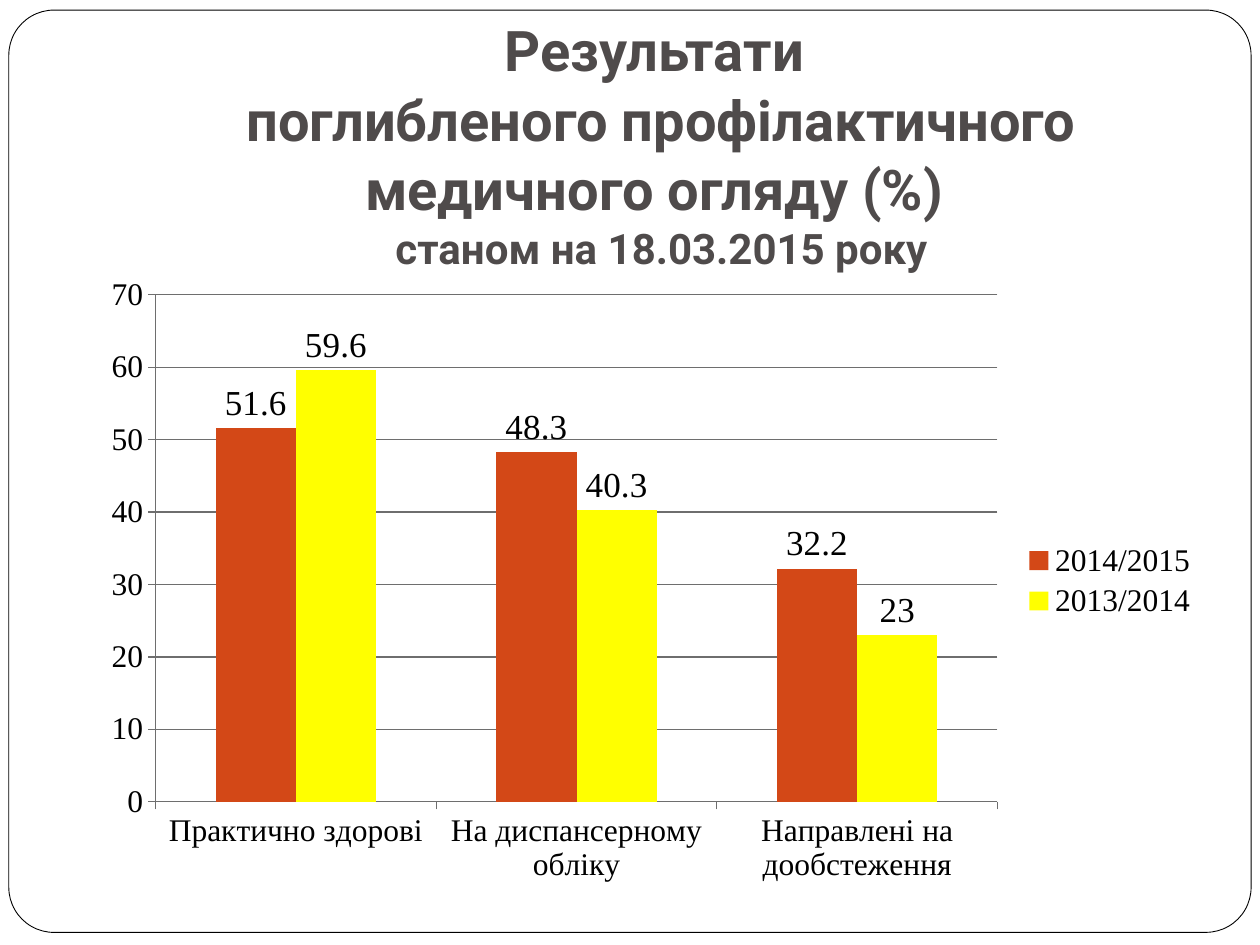
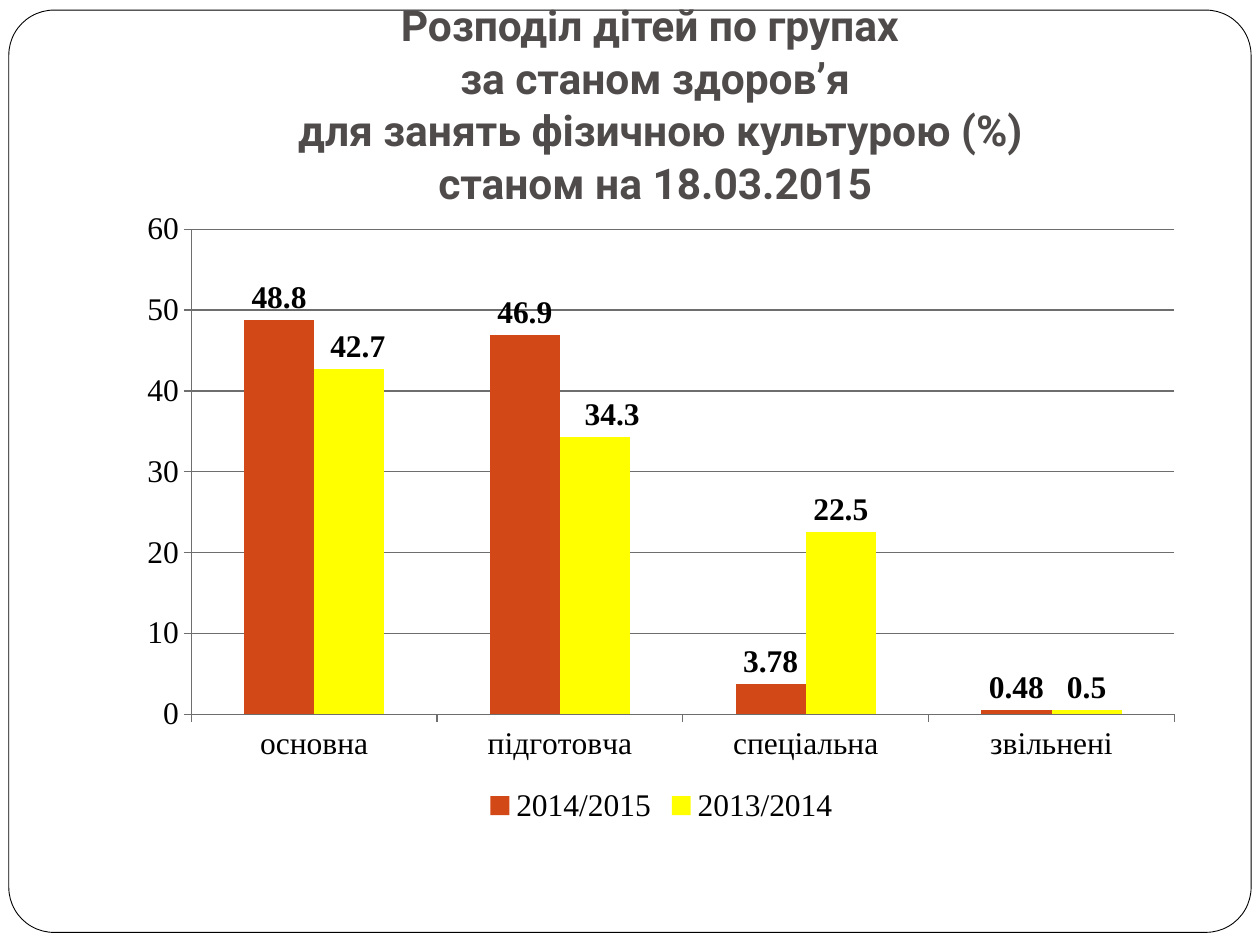
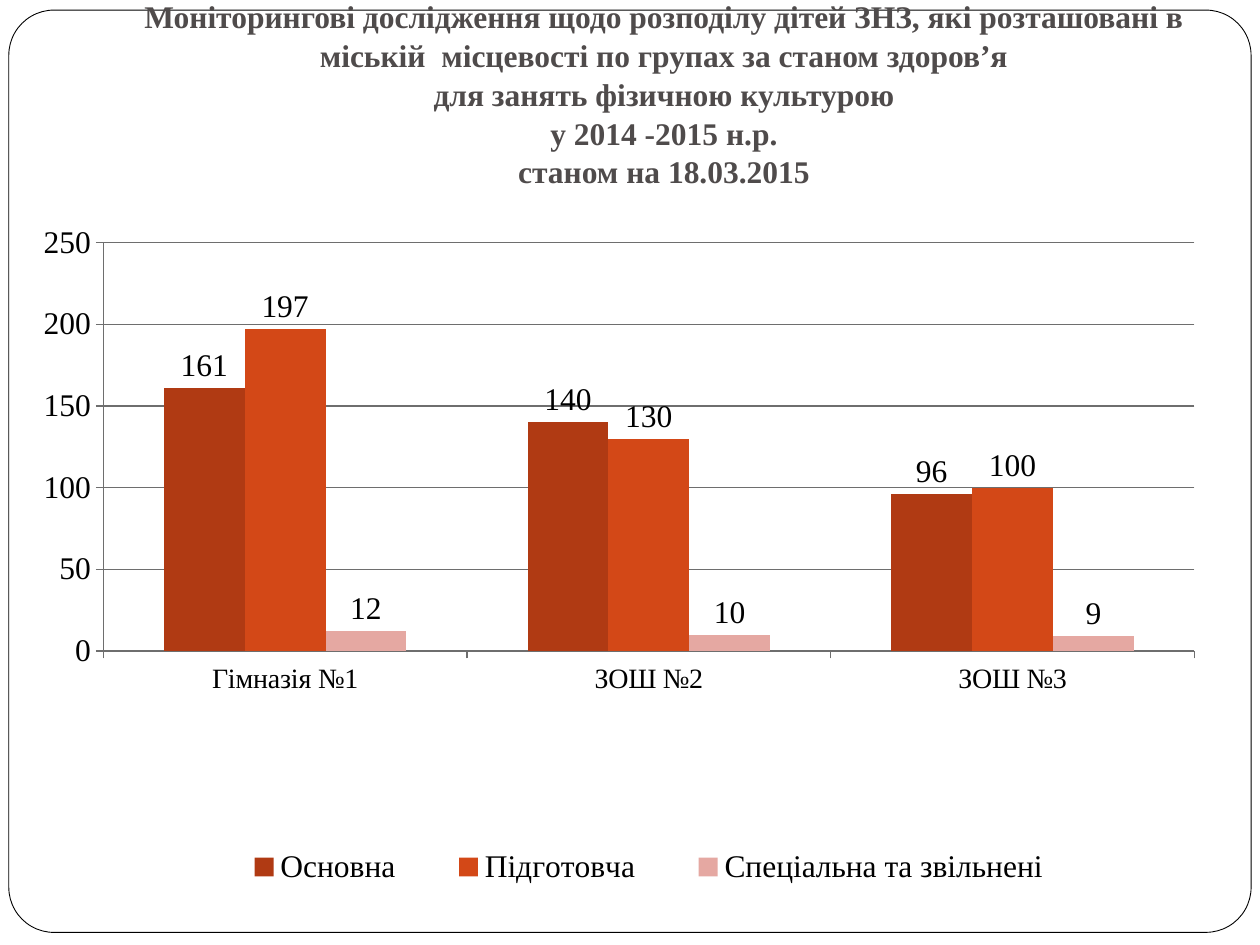
import lxml.etree
import pptx
import pptx.chart.data
import pptx.dml.color
import pptx.enum.chart
import pptx.enum.shapes
import pptx.enum.text
import pptx.oxml.ns
import pptx.util

Inches = pptx.util.Inches
Pt = pptx.util.Pt

BLACK, WHITE, TITLE_GREY, AXIS_GREY = "000000", "FFFFFF", "4F4B4B", "6E6E6E"
ORANGE, YELLOW, RUST, ROSE = "D34817", "FFFF00", "B03A13", "E5A8A2"
HEADING_FONT, BODY_FONT = "Roboto", "Times New Roman"


def rgb(hex_code):
    return pptx.dml.color.RGBColor.from_string(hex_code)


def style_font(font, size=18, name=BODY_FONT, color=BLACK, bold=False):
    font.size, font.name, font.bold = Pt(size), name, bold
    font.color.rgb = rgb(color)


def add_text(paragraph, text, **style):
    """Append text to a paragraph, turning each newline into a line break."""
    for number, line in enumerate(text.split("\n")):
        if number:
            paragraph.add_line_break()
        if line:
            run = paragraph.add_run()
            run.text = line
            style_font(run.font, **style)


def manual_layout(parts):
    """Build a c:layout element from pairs of part name and value."""
    layout = lxml.etree.Element(pptx.oxml.ns.qn("c:layout"))
    manual = lxml.etree.SubElement(layout, pptx.oxml.ns.qn("c:manualLayout"))
    for part, value in parts.items():
        lxml.etree.SubElement(manual, pptx.oxml.ns.qn(f"c:{part}")).set("val", str(value))
    return layout


def box_layout(left, top, width, height, **target):
    return manual_layout({**target, "xMode": "edge", "yMode": "edge",
                          "x": left, "y": top, "w": width, "h": height})


class Deck:
    def __init__(self):
        self.presentation = pptx.Presentation()
        self.presentation.slide_width = Inches(10)
        self.presentation.slide_height = Inches(7.5)
        self.slide = None

    def new_slide(self):
        first = self.slide is None
        self.slide = self.presentation.slides.add_slide(self.presentation.slide_layouts[5])
        if first:
            self.frame_master()

    def frame_master(self):
        """Put the rounded frame on the master, behind everything."""
        frame = self.slide.shapes.add_shape(
            pptx.enum.shapes.MSO_SHAPE.ROUNDED_RECTANGLE,
            Inches(0.07), Inches(0.08), Inches(9.86), Inches(7.32))
        frame.adjustments[0] = 0.049
        frame.shadow.inherit = False
        frame.fill.solid()
        frame.fill.fore_color.rgb = rgb(WHITE)
        frame.line.color.rgb = rgb(BLACK)
        frame.line.width = Pt(0.5)
        self.presentation.slide_master.shapes._spTree.insert(2, frame._element)

    def title(self, box, parts, bottom_inset=0.1, font=HEADING_FONT):
        """Fill the title with (text, size) parts."""
        title = self.slide.shapes.title
        title.left, title.top, title.width, title.height = map(Inches, box)
        frame = title.text_frame
        frame.word_wrap = True
        frame.auto_size = pptx.enum.text.MSO_AUTO_SIZE.NONE
        frame.vertical_anchor = pptx.enum.text.MSO_ANCHOR.BOTTOM
        frame.margin_left = frame.margin_right = Inches(0.1)
        frame.margin_top, frame.margin_bottom = Inches(0.05), Inches(bottom_inset)
        paragraph = frame.paragraphs[0]
        paragraph.alignment = pptx.enum.text.PP_ALIGN.CENTER
        paragraph.line_spacing = 1.03
        for text, size in parts:
            add_text(paragraph, text, size=size, name=font, color=TITLE_GREY, bold=True)

    def column_chart(self, box, categories, series, plot, top, step, category_size=18,
                     label_size=18, label_bold=False, legend_below=True):
        """Add clustered columns; series holds (name, colour, values)."""
        data = pptx.chart.data.CategoryChartData()
        data.categories = categories
        for name, _, values in series:
            data.add_series(name, values)
        chart = self.slide.shapes.add_chart(
            pptx.enum.chart.XL_CHART_TYPE.COLUMN_CLUSTERED, *map(Inches, box), data).chart
        style_font(chart.font)
        chart.has_title = False
        columns = chart.plots[0]
        columns.gap_width, columns.overlap = 150, 0
        columns.vary_by_categories = False

        for column, (_, color, _) in zip(columns.series, series):
            column.format.fill.solid()
            column.format.fill.fore_color.rgb = rgb(color)
            column.invert_if_negative = False
            labels = column.data_labels
            labels.show_value = True
            labels.position = pptx.enum.chart.XL_LABEL_POSITION.OUTSIDE_END
            style_font(labels.font, size=label_size, bold=label_bold)

        values_axis = chart.value_axis
        values_axis.minimum_scale, values_axis.maximum_scale = 0, top
        values_axis.major_unit = step
        values_axis.has_major_gridlines = True
        style_font(chart.category_axis.tick_labels.font, size=category_size)
        for part in (values_axis, chart.category_axis, values_axis.major_gridlines):
            part.format.line.color.rgb = rgb(AXIS_GREY)
            part.format.line.width = Pt(0.75)

        chart.has_legend = True
        position = pptx.enum.chart.XL_LEGEND_POSITION
        chart.legend.position = position.BOTTOM if legend_below else position.RIGHT
        chart.legend.include_in_layout = False
        style_font(chart.legend.font)

        area = chart._chartSpace.chart.plotArea
        for old_layout in area.findall(pptx.oxml.ns.qn("c:layout")):
            area.remove(old_layout)
        area.insert(0, box_layout(*plot, layoutTarget="inner"))
        return chart

    def place_legend(self, chart, *box):
        legend = chart.legend._element
        for old_layout in legend.findall(pptx.oxml.ns.qn("c:layout")):
            legend.remove(old_layout)
        legend.find(pptx.oxml.ns.qn("c:legendPos")).addnext(box_layout(*box))

    def shift_label(self, column, index, distance):
        """Move one bold value label right by a share of the chart width."""
        label = column.points[index].data_label
        style_font(label.font, bold=True)
        label.position = pptx.enum.chart.XL_LABEL_POSITION.OUTSIDE_END
        for entry in column.data_labels._element.findall(pptx.oxml.ns.qn("c:dLbl")):
            number = entry.find(pptx.oxml.ns.qn("c:idx"))
            if number.get("val") == str(index):
                number.addnext(manual_layout({"x": distance, "y": 0}))


def main():
    deck = Deck()

    deck.new_slide()
    deck.title((1, 0.3, 8.5, 1.97), [
        ("Результати \nпоглибленого профілактичного медичного огляду (%) \n", 32),
        ("станом на 18.03.2015 року", 24)])
    deck.column_chart(
        (0.7, 2.11, 8.91, 5),
        ["Практично здорові", "На диспансерному обліку", "Направлені на дообстеження"],
        [("2014/2015", ORANGE, (51.6, 48.3, 32.2)),
         ("2013/2014", YELLOW, (59.6, 40.3, 23))],
        plot=(0.06, 0.046, 0.75, 0.805), top=70, step=10, label_size=20, legend_below=False)

    deck.new_slide()
    deck.title((0.7, 0.94, 9, 1.41), [
        ("Розподіл дітей по групах \nза станом здоров’я\n"
         " для занять фізичною культурою (%)\nстаном на 18.03.2015", 24.3)],
        bottom_inset=0.7)
    groups = deck.column_chart(
        (1, 1.58, 8.5, 5),
        ["основна", "підготовча", "спеціальна", "звільнені"],
        [("2014/2015", ORANGE, (48.8, 46.9, 3.78, 0.48)),
         ("2013/2014", YELLOW, (42.7, 34.3, 22.5, 0.5))],
        plot=(0.061, 0.048, 0.918, 0.77), top=60, step=10, label_bold=True)
    previous_year = groups.plots[0].series[1]
    for index, distance in enumerate((0.008, 0.016)):
        deck.shift_label(previous_year, index, distance)

    deck.new_slide()
    deck.title((1.02, 0.62, 8.5, 1.25), [
        ("Моніторингові дослідження щодо розподілу дітей ЗНЗ, які розташовані в "
         "міській  місцевості по групах за станом здоров’я\n"
         "для занять фізичною культурою\n у 2014 -2015 н.р. \nстаном на 18.03.2015", 18)],
        bottom_inset=0.36, font=BODY_FONT)
    schools = deck.column_chart(
        (0, 1.72, 10, 5.55),
        ["Гімназія №1", "ЗОШ №2", "ЗОШ №3"],
        [("Основна", RUST, (161, 140, 96)),
         ("Підготовча", ORANGE, (197, 130, 100)),
         ("Спеціальна та звільнені", ROSE, (12, 10, 9))],
        plot=(0.082, 0.037, 0.866, 0.584), top=250, step=50, category_size=16)
    deck.place_legend(schools, 0.16, 0.89, 0.71, 0.08)

    deck.presentation.save("out.pptx")


if __name__ == "__main__":
    main()
